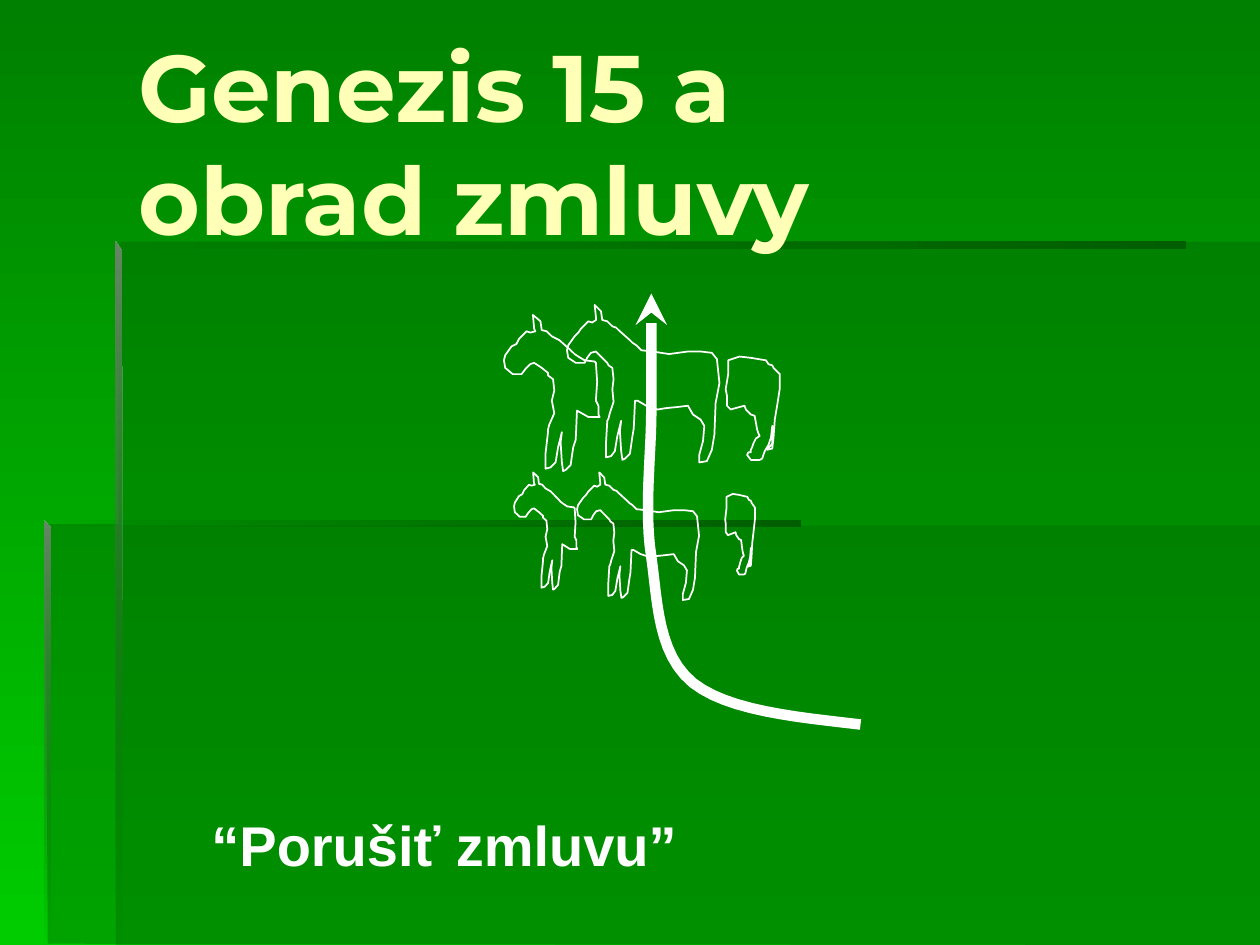
from lxml import etree
from pptx import Presentation
from pptx.dml.color import RGBColor
from pptx.oxml.ns import qn
from pptx.util import Inches, Pt


def rgb(value):
    return RGBColor.from_string(value)


def outline(points, close=True):
    """Add a freeform through points given in inches, without fill or line."""
    emu = [(Inches(x), Inches(y)) for x, y in points]
    builder = slide.shapes.build_freeform(*emu[0])
    builder.add_line_segments(emu[1:], close=close)
    sp = builder.convert_to_shape()
    sp.shadow.inherit = False
    sp.fill.background()
    sp.line.fill.background()
    return sp


prs = Presentation()
prs.slide_width, prs.slide_height = Inches(10), Inches(7.5)
slide = prs.slides.add_slide(prs.slide_layouts[6])

bg = slide.background.fill
bg.gradient()
bg.gradient_angle = 270
for stop, color in zip(bg.gradient_stops, ("008000", "00CC00")):
    stop.color.rgb = rgb(color)

# Translucent panels: outline, opacity in percent
panels = [
    ([(0.95, 1.92), (0.94, 4.16), (0.36, 4.16), (0.38, 7.49), (10, 7.5), (10, 1.92)], 40),
    ([(0.92, 4.17), (0.92, 7.5), (10, 7.5), (10, 4.17)], 30),
]
for points, opacity in panels:
    sp = outline(points)
    sp.fill.solid()
    sp.fill.fore_color.rgb = rgb("006600")
    clr = sp.fill._xPr.find(qn("a:solidFill"))[0]
    etree.SubElement(clr, qn("a:alpha")).set("val", str(opacity * 1000))

# Bevelled edges fading out: outline, colours, index of the clear stop, angle
across = (("006600", "005E00"), 0, 0)
down = (("668666", "006600"), 1, 270)
edges = [
    ([(0.35, 4.13), (0.35, 4.18), (6.35, 4.18), (6.35, 4.13)], across),
    ([(0.92, 1.92), (0.92, 1.97), (9.41, 1.97), (9.41, 1.92)], across),
    ([(0.35, 4.13), (0.35, 7.53), (0.4, 7.53), (0.4, 4.19)], down),
    ([(0.92, 1.92), (0.92, 7.52), (0.97, 7.52), (0.96, 1.99)], down),
]
for points, (colors, clear, angle) in edges:
    sp = outline(points)
    sp.fill.gradient()
    sp.fill.gradient_angle = angle
    for stop, color in zip(sp.fill.gradient_stops, colors):
        stop.color.rgb = rgb(color)
    clr = sp.fill._xPr.find(qn("a:gradFill")).findall(".//" + qn("a:srgbClr"))[clear]
    etree.SubElement(clr, qn("a:alpha")).set("val", "0")

# Texts: left, top, width, height, top inset, lines, size, font, colour
texts = [
    (1, 0.17, 8.5, 1.25, 0.05, ["Genezis 15 a", "obrad zmluvy"], 54, "Montserrat", "FFFFB7"),
    (1.58, 6.33, 7, 0.58, 0.1, ["“Porušiť zmluvu”"], 32, "Arial", "FFFFFF"),
]
for left, top, width, height, inset, lines, size, font, color in texts:
    tf = slide.shapes.add_textbox(Inches(left), Inches(top), Inches(width), Inches(height)).text_frame
    tf.word_wrap = True
    tf.margin_top = Inches(inset)
    p = tf.paragraphs[0]
    for i, line in enumerate(lines):
        if i:
            p.add_line_break()
        r = p.add_run()
        r.text = line
        r.font.size, r.font.name, r.font.bold = Pt(size), font, True
        r.font.color.rgb = rgb(color)

# Animal outlines, in hundredths of an inch from their top left corner
front_half = [
    (18, 13), (12, 19), (10, 23), (6, 25), (1, 32), (0, 36), (1, 42), (7, 47), (14, 47), (17, 43),
    (21, 39), (24, 38), (30, 42), (35, 46), (35, 48), (39, 51), (40, 60), (38, 68), (40, 78), (36, 87),
    (35, 91), (35, 93), (33, 110), (33, 122), (37, 121), (41, 117), (43, 105), (46, 93), (45, 101),
    (46, 117), (47, 124), (49, 123), (53, 119), (55, 105), (57, 99), (58, 76), (60, 77), (67, 81),
    (76, 81), (75, 79), (75, 72), (73, 68), (74, 53), (73, 38), (72, 37), (64, 36), (59, 33), (56, 31),
    (53, 28), (44, 20), (42, 19), (38, 17), (34, 13), (30, 12), (29, 5), (23, 0), (24, 11), (25, 13),
    (21, 14),
]
rear_half = [
    (3, 3), (3, 14), (1, 26), (2, 31), (2, 39), (5, 42), (16, 39), (17, 42), (21, 46), (24, 47),
    (26, 58), (27, 61), (28, 63), (25, 65), (24, 67), (23, 69), (22, 72), (21, 74), (21, 76), (19, 76),
    (18, 78), (21, 82), (28, 82), (30, 81), (32, 75), (35, 70), (37, 64), (38, 55), (38, 57), (38, 69),
    (34, 74), (38, 73), (39, 64), (40, 50), (42, 38), (44, 25), (44, 14), (39, 9), (38, 7), (35, 6),
    (33, 3), (21, 1), (12, 0),
]
whole_animal = [
    (17, 13), (11, 19), (9, 22), (6, 25), (1, 32), (0, 36), (1, 42), (7, 46), (14, 46), (16, 42),
    (19, 38), (23, 37), (28, 42), (32, 46), (33, 48), (36, 50), (37, 59), (36, 67), (37, 77), (34, 86),
    (33, 90), (32, 92), (31, 109), (31, 121), (35, 120), (38, 116), (40, 104), (43, 92), (42, 100),
    (43, 116), (44, 123), (46, 122), (50, 118), (52, 104), (53, 98), (54, 76), (56, 76), (63, 80),
    (72, 83), (78, 82), (88, 81), (96, 80), (100, 87), (106, 91), (109, 96), (108, 108), (105, 119),
    (105, 125), (111, 124), (115, 115), (117, 103), (118, 78), (121, 62), (119, 43), (115, 38),
    (106, 37), (96, 37), (81, 39), (68, 37), (59, 36), (55, 32), (52, 30), (50, 28), (41, 20), (39, 18),
    (36, 17), (32, 13), (28, 12), (27, 5), (22, 0), (23, 10), (23, 12), (20, 14),
]
# Each outline is drawn large and small: left, top, horizontal and vertical scale
animals = [
    (front_half, 4, 2.5, 1, 1), (front_half, 4.08, 3.75, 0.66, 0.75),
    (rear_half, 5.75, 2.83, 1, 1), (rear_half, 5.75, 3.92, 0.55, 0.78),
    (whole_animal, 4.5, 2.42, 1, 1), (whole_animal, 4.58, 3.75, 0.8, 0.81),
]
for points, left, top, sx, sy in animals:
    sp = outline([(left + x * sx / 100, top + y * sy / 100) for x, y in points])
    sp.line.color.rgb = rgb("FFFFFF")
    sp.line.width = Pt(1)

# Curved arrow between the halves: Bezier pieces sampled in equal steps
knots = [
    (6.83, 5.75), (6.31, 5.69), (5.78, 5.64), (5.5, 5.42), (5.22, 5.19), (5.22, 4.78),
    (5.17, 4.42), (5.11, 4.06), (5.17, 3.6), (5.17, 3.25), (5.17, 2.9), (5.17, 2.62), (5.17, 2.33),
]
steps = 12
curve = [knots[0]]
for k in range(0, len(knots) - 1, 3):
    for t in (n / steps for n in range(1, steps + 1)):
        weights = ((1 - t) ** 3, 3 * t * (1 - t) ** 2, 3 * t * t * (1 - t), t ** 3)
        curve.append(tuple(sum(w * c for w, c in zip(weights, axis)) for axis in zip(*knots[k:k + 4])))
arrow = outline(curve, close=False)
arrow.line.color.rgb = rgb("FFFFFF")
arrow.line.width = Pt(6)
ln = arrow.line._get_or_add_ln()
etree.SubElement(ln, qn("a:round"))
etree.SubElement(ln, qn("a:tailEnd")).set("type", "stealth")

prs.save("out.pptx")
